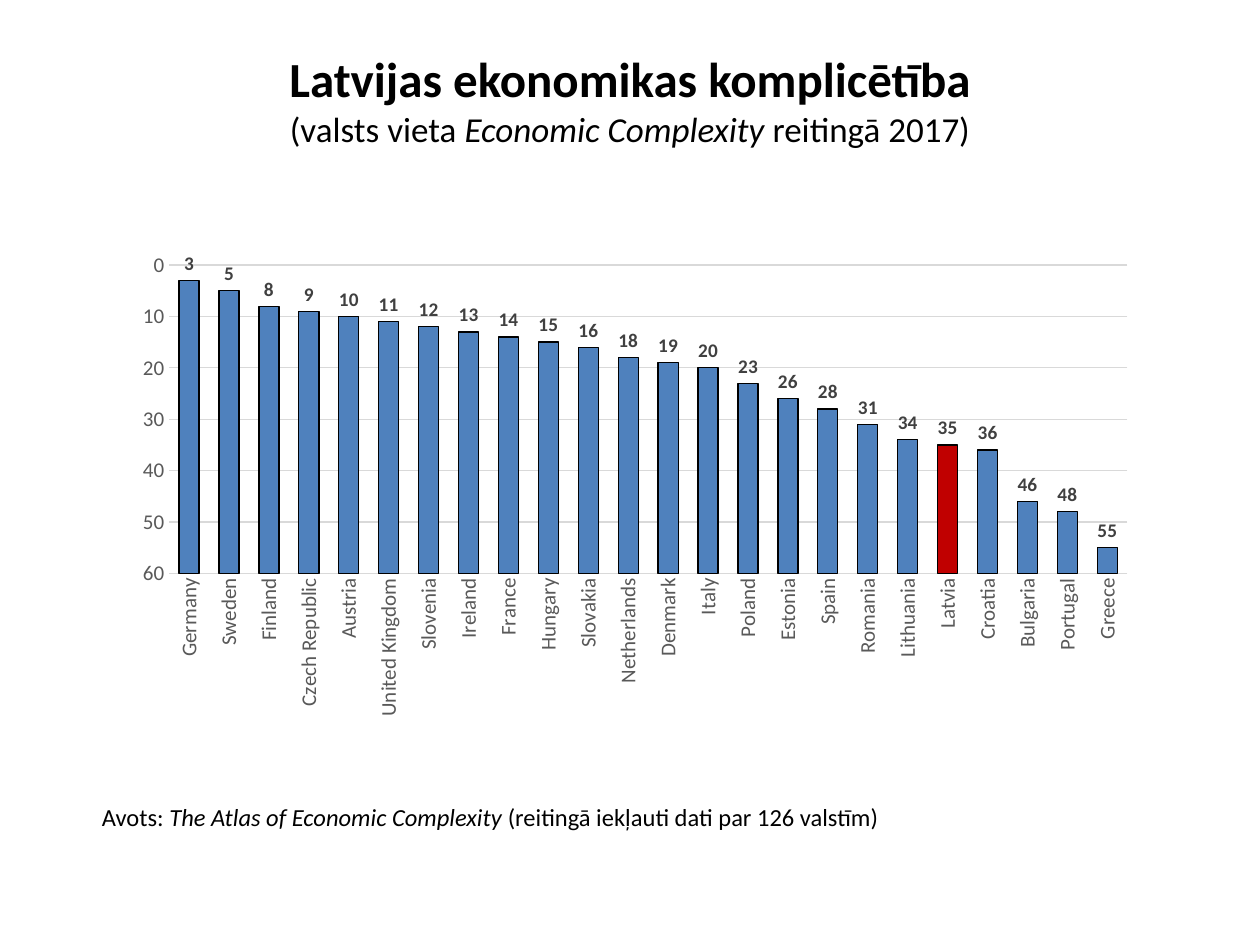
import pptx
import pptx.chart.data
import pptx.dml.color
import pptx.enum.chart
import pptx.enum.text
import pptx.util
from lxml import etree

deck = pptx.Presentation()
deck.slide_width = pptx.util.Inches(10)
deck.slide_height = pptx.util.Inches(7.5)
slide = deck.slides.add_slide(deck.slide_layouts[6])
column = deck.slide_width / 100
row = deck.slide_height / 75


def color(hex_code):
    return pptx.dml.color.RGBColor.from_string(hex_code)


def style(font, size, hex_code, bold=False, italic=False):
    font.name = "Calibri"
    font.size = pptx.util.Pt(size)
    font.color.rgb = color(hex_code)
    font.bold = bold
    font.italic = italic


heading = slide.shapes.add_textbox(
    int(5 * column), int(3 * row), int(90 * column), int(12.5 * row)).text_frame
heading.word_wrap = True
heading.vertical_anchor = pptx.enum.text.MSO_ANCHOR.MIDDLE
heading.margin_bottom = pptx.util.Inches(0.33)
title_line = heading.paragraphs[0]
title_line.alignment = pptx.enum.text.PP_ALIGN.CENTER
for words, size, bold, italic in [
    ("Latvijas ekonomikas komplicētība", 28, True, False),
    ("(valsts vieta ", 20, False, False),
    ("Economic Complexity ", 20, False, True),
    ("reitingā 2017)", 20, False, False),
]:
    run = title_line.add_run()
    run.text = words
    style(run.font, size, "000000", bold, italic)
    if bold:
        title_line.add_line_break()

ranks = {
    "Germany": 3, "Sweden": 5, "Finland": 8, "Czech Republic": 9,
    "Austria": 10, "United Kingdom": 11, "Slovenia": 12, "Ireland": 13,
    "France": 14, "Hungary": 15, "Slovakia": 16, "Netherlands": 18,
    "Denmark": 19, "Italy": 20, "Poland": 23, "Estonia": 26,
    "Spain": 28, "Romania": 31, "Lithuania": 34, "Latvia": 35,
    "Croatia": 36, "Bulgaria": 46, "Portugal": 48, "Greece": 55,
}
ranking = pptx.chart.data.CategoryChartData()
ranking.categories = list(ranks)
ranking.add_series("Series 1", list(ranks.values()))
chart = slide.shapes.add_chart(
    pptx.enum.chart.XL_CHART_TYPE.COLUMN_CLUSTERED,
    int(9.2 * column), int(17.9 * row), int(84.5 * column), int(44.9 * row),
    ranking).chart
chart.has_legend = False
chart.has_title = False
style(chart.font, 12, "000000")

countries = chart.category_axis
places = chart.value_axis
for axis in (countries, places):
    axis.major_tick_mark = pptx.enum.chart.XL_TICK_MARK.NONE
    axis.minor_tick_mark = pptx.enum.chart.XL_TICK_MARK.NONE
    style(axis.tick_labels.font, 12, "595959")
places.minimum_scale = 0
places.maximum_scale = 60
places.major_unit = 10
places.reverse_order = True
places.crosses = pptx.enum.chart.XL_AXIS_CROSSES.MAXIMUM
places.format.line.fill.background()
for line in (countries.format.line, places.major_gridlines.format.line):
    line.color.rgb = color("D9D9D9")
    line.width = pptx.util.Pt(0.75)
countries.tick_labels.font
countries._element.txPr.bodyPr.set("rot", "-5400000")
countries._element.txPr.bodyPr.set("vert", "horz")

plot = chart.plots[0]
plot.gap_width = 99
plot.overlap = -27
plot.vary_by_categories = False
bars = plot.series[0]
latvia = bars.points[list(ranks).index("Latvia")]
for part, fill in [(bars, "4F81BD"), (latvia, "C00000")]:
    part.format.fill.solid()
    part.format.fill.fore_color.rgb = color(fill)
    part.format.line.color.rgb = color("000000")
    part.format.line.width = pptx.util.Pt(0.75)
labels = bars.data_labels
labels.show_value = True
labels.position = pptx.enum.chart.XL_LABEL_POSITION.OUTSIDE_END
style(labels.font, 11, "404040", bold=True)

plot_area = chart._chartSpace.chart.plotArea
chart_ns = plot_area.nsmap["c"]
for old_layout in plot_area.findall(f"{{{chart_ns}}}layout"):
    plot_area.remove(old_layout)
layout = etree.Element(f"{{{chart_ns}}}layout")
manual = etree.SubElement(layout, f"{{{chart_ns}}}manualLayout")
for tag, value in [
    ("layoutTarget", "inner"), ("xMode", "edge"), ("yMode", "edge"),
    ("x", "0.05"), ("y", "0.07"), ("w", "0.9"), ("h", "0.545"),
]:
    etree.SubElement(manual, f"{{{chart_ns}}}{tag}").set("val", value)
plot_area.insert(0, layout)

source = slide.shapes.add_textbox(
    int(7.1 * column), int(63 * row), int(81.3 * column), int(3.5 * row)).text_frame
source.word_wrap = True
source_line = source.paragraphs[0]
source_line.line_spacing = 1.07
source_line.space_after = pptx.util.Pt(8)
for words, italic in [
    ("Avots: ", False),
    ("The Atlas of Economic Complexity ", True),
    ("(reitingā iekļauti dati par 126 valstīm)", False),
]:
    run = source_line.add_run()
    run.text = words
    style(run.font, 14, "000000", italic=italic)

deck.save("out.pptx")
